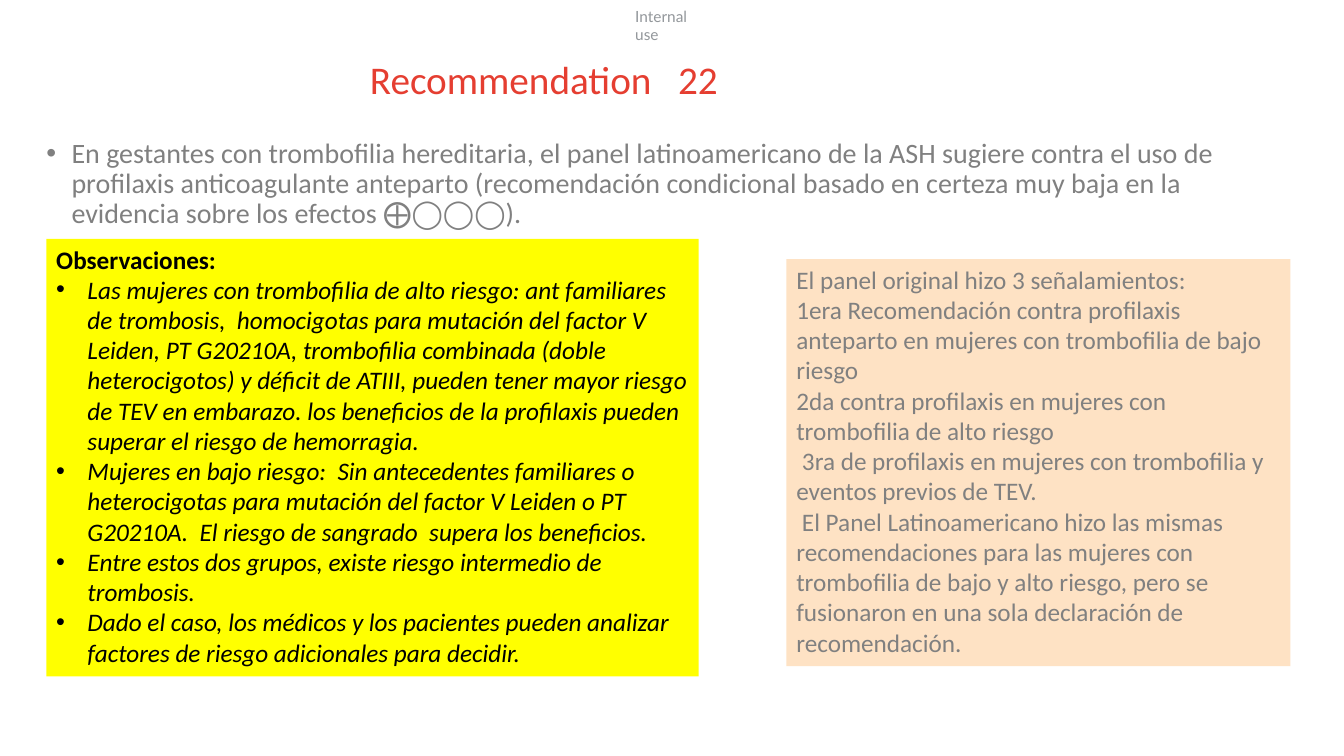
from lxml import etree
from pptx import Presentation
from pptx.dml.color import RGBColor
from pptx.enum.shapes import MSO_SHAPE
from pptx.enum.text import MSO_ANCHOR, PP_ALIGN
from pptx.oxml.ns import qn
from pptx.util import Inches, Pt

RECTANGLE = MSO_SHAPE.RECTANGLE
TOP = MSO_ANCHOR.TOP
LEFT = PP_ALIGN.LEFT

COLORS = {
    "label": "93979B",
    "title": "E53E31",
    "body": "808080",
    "black": "000000",
    "yellow": "FFFF00",
    "peach": "FEE2C4",
}

RECOMMENDATION = (
    "En gestantes con trombofilia hereditaria, el panel latinoamericano de la ASH "
    "sugiere contra el uso de profilaxis anticoagulante anteparto (recomendación "
    "condicional basado en certeza muy baja en la evidencia sobre los efectos ⨁◯◯◯)."
)
OBSERVATIONS = [
    "Observaciones:",
    "Las mujeres con trombofilia de alto riesgo: ant familiares de trombosis,  "
    "homocigotas para mutación del factor V Leiden, PT G20210A, trombofilia combinada "
    "(doble heterocigotos) y déficit de ATIII, pueden tener mayor riesgo de TEV en "
    "embarazo. los beneficios de la profilaxis pueden superar el riesgo de hemorragia.",
    "Mujeres en bajo riesgo:  Sin antecedentes familiares o  heterocigotas para "
    "mutación del factor V Leiden o PT G20210A.  El riesgo de sangrado  supera los "
    "beneficios.",
    "Entre estos dos grupos, existe riesgo intermedio de trombosis.",
    "Dado el caso, los médicos y los pacientes pueden analizar  factores de riesgo "
    "adicionales para decidir.",
]
PANEL_NOTES = [
    "El panel original hizo 3 señalamientos:",
    "1era Recomendación contra profilaxis anteparto en mujeres con trombofilia de bajo riesgo",
    "2da contra profilaxis en mujeres con trombofilia de alto riesgo",
    " 3ra de profilaxis en mujeres con trombofilia y eventos previos de TEV.",
    " El Panel Latinoamericano hizo las mismas recomendaciones para las mujeres con "
    "trombofilia de bajo y alto riesgo, pero se fusionaron en una sola declaración de "
    "recomendación.",
]


class SlideBuilder:
    def __init__(self, page, font="Calibri"):
        self.page = page
        self.font = font

    def text(self, area, content, size, color, font=None, spacing=1.0, indent=None):
        box = self.page.shapes.add_textbox(*map(Inches, area))
        frame = box.text_frame
        frame.margin_left = frame.margin_right = 0
        frame.margin_top = frame.margin_bottom = 0
        para = self.fill_text(frame, [content], size, color, font)[0]
        para.line_spacing = spacing
        if indent:
            self.bullet(para, indent)

    def panel(self, area, lines, fill, color):
        box = self.page.shapes.add_shape(RECTANGLE, *map(Inches, area))
        box.shadow.inherit = False
        box.fill.solid()
        box.fill.fore_color.rgb = RGBColor.from_string(COLORS[fill])
        box.line.fill.background()
        return self.fill_text(box.text_frame, lines, 18, color)

    def fill_text(self, frame, lines, size, color, font=None):
        frame.word_wrap = True
        frame.vertical_anchor = TOP
        frame.text = "\n".join(lines)
        for para in frame.paragraphs:
            para.alignment = LEFT
            for span in para.runs:
                span.font.name = font or self.font
                span.font.size = Pt(size)
                span.font.color.rgb = RGBColor.from_string(COLORS[color])
        return frame.paragraphs

    def bullet(self, para, indent):
        properties = para._p.get_or_add_pPr()
        properties.set("marL", str(Inches(indent)))
        properties.set("indent", str(-Inches(indent)))
        etree.SubElement(properties, qn("a:buFont")).set("typeface", "Arial")
        etree.SubElement(properties, qn("a:buChar")).set("char", "•")


def main():
    deck = Presentation()
    deck.slide_width, deck.slide_height = Inches(13.33), Inches(7.5)
    builder = SlideBuilder(deck.slides.add_slide(deck.slide_layouts[6]))

    builder.text((6.3, 0.07, 0.78, 0.18), "Internal use", 11, "label", font="Lato")

    heading, *points = builder.panel(
        (0.46, 2.37, 6.47, 4.34), OBSERVATIONS, "yellow", "black"
    )
    heading.runs[0].font.bold = True
    for point in points:
        builder.bullet(point, 0.31)
        point.runs[0].font.italic = True

    builder.panel((7.8, 2.57, 5, 4.04), PANEL_NOTES, "peach", "body")
    builder.text((3.67, 0.6, 5.93, 0.46), "Recommendation   22", 28, "title", spacing=0.9)
    builder.text(
        (0.46, 1.38, 12, 1.19), RECOMMENDATION, 20, "body", spacing=0.9, indent=0.25
    )
    deck.save("out.pptx")


if __name__ == "__main__":
    main()
